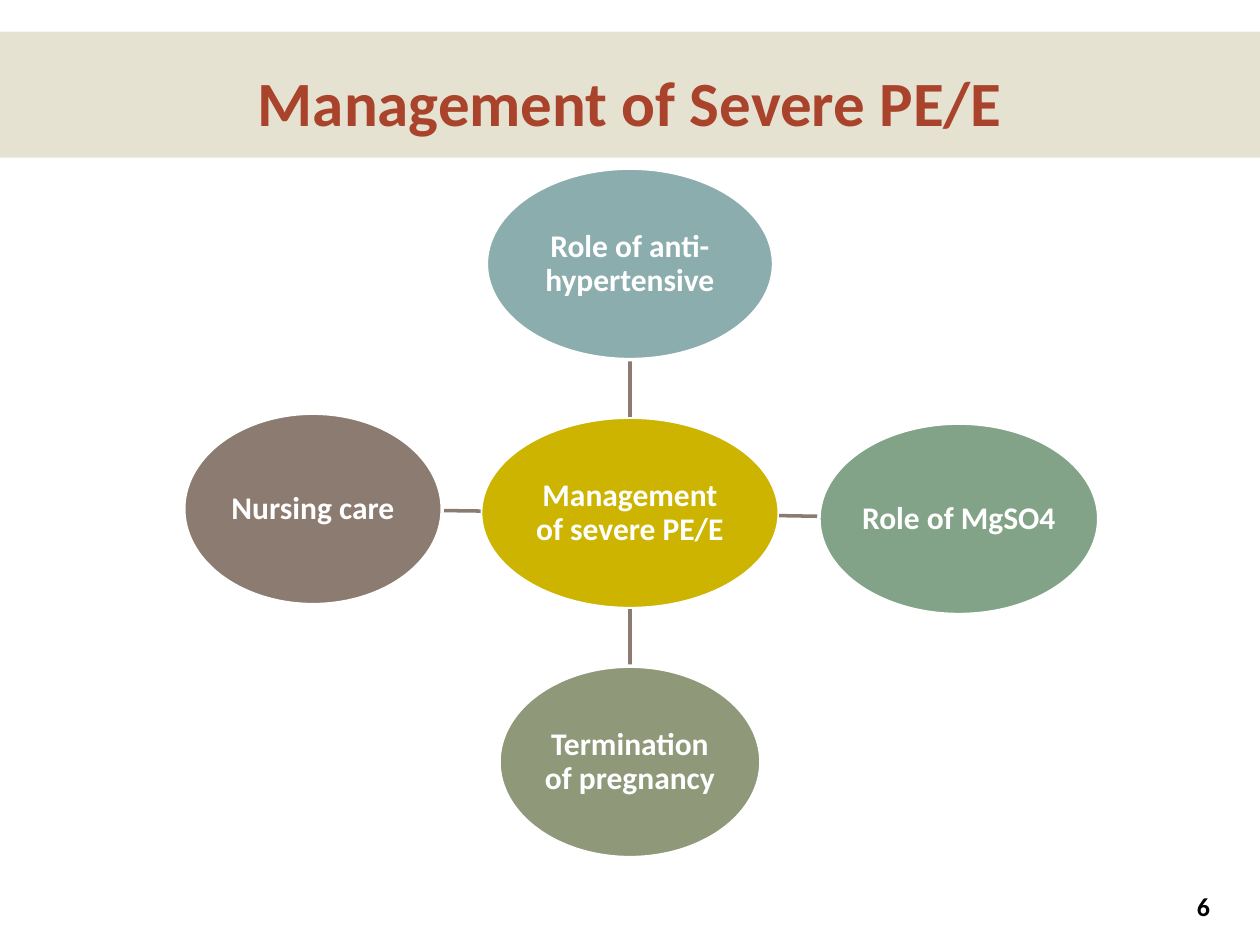
from math import hypot
from lxml.etree import SubElement as Sub
from pptx import Presentation
from pptx.dml.color import RGBColor as Rgb
from pptx.enum.shapes import MSO_CONNECTOR as Link, MSO_SHAPE as Kind
from pptx.enum.text import MSO_ANCHOR as Anchor, PP_ALIGN as Align
from pptx.oxml.ns import qn
from pptx.util import Cm, Pt

HUES = {"band": "DDD9C3", "title": "A9432B", "hub": "CCB400", "top": "8CADAE",
        "right": "82A387", "low": "8F9879", "left": "8C7B70",
        "line": "8C7B70", "white": "FFFFFF", "black": "000000"}
TITLE = "Management of Severe PE/E"
PAGE = "6"
HUB = ("Management of severe PE/E", "hub", 6.02)
LEAVES = [
    ("Role of anti-hypertensive", "top", 5.79, 0, -5.02),
    ("Role of MgSO4", "right", 5.64, 6.63, 0.12),
    ("Termination of pregnancy", "low", 5.28, 0, 5.02),
    ("Nursing care", "left", 5.21, -6.39, -0.08),
]
MID = (12.7, 10.34)
TALL = 3.86

deck = Presentation()
deck.slide_width, deck.slide_height = Cm(25.4), Cm(19.05)
slide = deck.slides.add_slide(deck.slide_layouts[6])
shapes = slide.shapes


def hue(name):
    return Rgb.from_string(HUES[name])


def write(shape, text, size=18, color="white", align=Align.CENTER,
          anchor=Anchor.MIDDLE, inset=None, space=None):
    frame = shape.text_frame
    frame.word_wrap = True
    frame.vertical_anchor = anchor
    if inset is not None:
        frame.margin_left = frame.margin_right = Cm(inset)
        frame.margin_top = frame.margin_bottom = Cm(inset)
    para = frame.paragraphs[0]
    para.alignment = align
    if space:
        para.line_spacing = space
    run = para.add_run()
    run.text = text
    font = run.font
    font.name, font.size, font.bold = "Calibri", Pt(size), True
    font.color.rgb = hue(color)


def solid(kind, box, color):
    shape = shapes.add_shape(kind, *map(Cm, box))
    shape.shadow.inherit = False
    shape.fill.solid()
    shape.fill.fore_color.rgb = hue(color)
    return shape


def node(text, color, wide, x, y):
    oval = solid(Kind.OVAL, (x - wide / 2, y - TALL / 2, wide, TALL), color)
    oval.line.color.rgb = hue("white")
    oval.line.width = Pt(2)
    write(oval, text, inset=0.03, space=0.9)


def reach(wide, dx, dy):
    return 1 / hypot(dx / (wide / 2), dy / (TALL / 2))


def spoke(wide, dx, dy):
    start, end = reach(HUB[2], dx, dy), 1 - reach(wide, dx, dy)
    ends = [Cm(c + t * d) for t in (start, end) for c, d in zip(MID, (dx, dy))]
    line = shapes.add_connector(Link.STRAIGHT, *ends)
    line.line.color.rgb = hue("line")
    line.line.width = Pt(2)
    Sub(line._element.spPr, qn("a:effectLst"))


band = solid(Kind.RECTANGLE, (0, 0.64, 25.4, 2.54), "band")
band.line.fill.background()
tint = band._element.spPr.find(qn("a:solidFill"))[0]
Sub(tint, qn("a:alpha"), val="76000")

head = shapes.add_textbox(Cm(0.76), Cm(0.64), Cm(23.88), Cm(2.29))
write(head, TITLE, size=36, color="title", anchor=Anchor.BOTTOM)
foot = shapes.add_textbox(Cm(22.2), Cm(17.86), Cm(2.44), Cm(0.81))
write(foot, PAGE, size=14.8, color="black", align=Align.RIGHT)

node(*HUB, *MID)
for text, color, wide, dx, dy in LEAVES:
    spoke(wide, dx, dy)
    node(text, color, wide, MID[0] + dx, MID[1] + dy)

deck.save("out.pptx")
